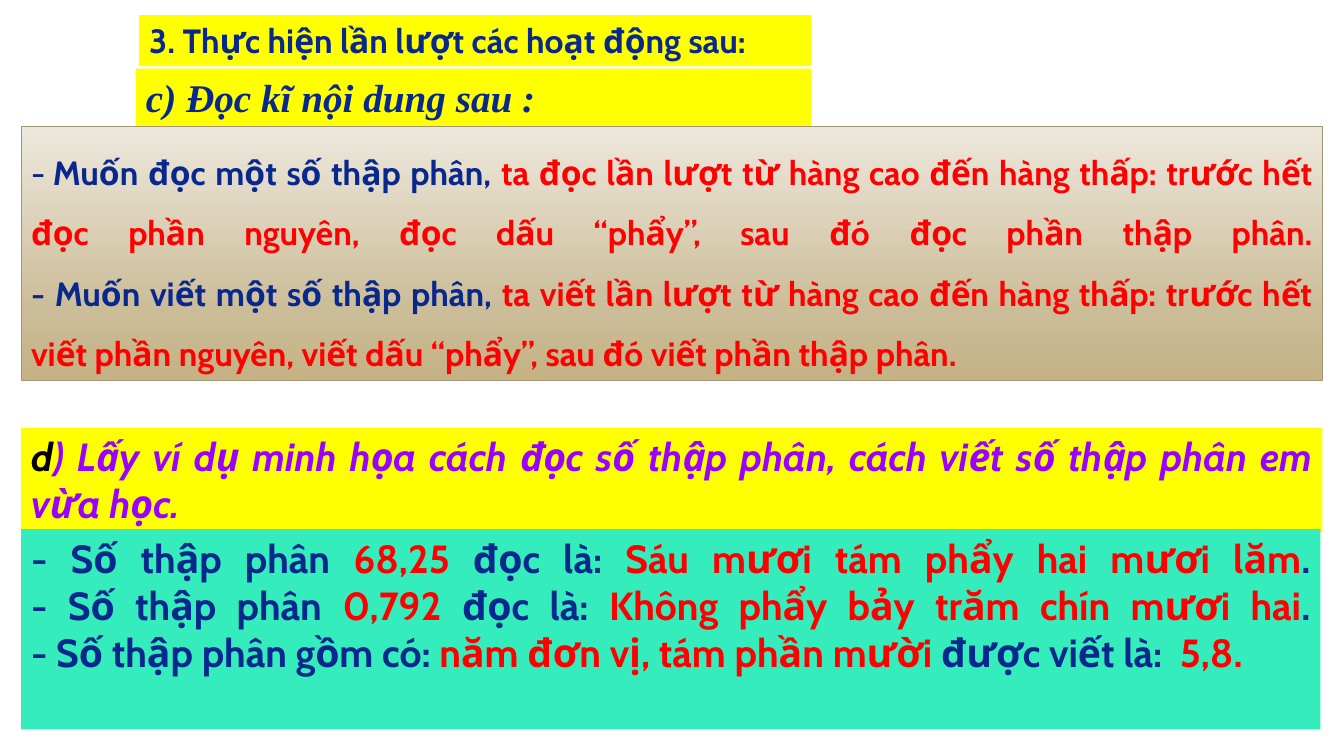
from copy import deepcopy

from pptx import Presentation
from pptx.dml.color import RGBColor
from pptx.enum.text import MSO_ANCHOR, MSO_AUTO_SIZE, PP_ALIGN
from pptx.oxml.ns import qn
from pptx.util import Pt

TOP, FIXED = MSO_ANCHOR.TOP, MSO_AUTO_SIZE.NONE
LEFT, JUST = PP_ALIGN.LEFT, PP_ALIGN.JUSTIFY

THEME = {
    "navy": "09288D", "red": "FF0000", "black": "000000", "violet": "9900FF",
    "yellow": "FFFF00", "mint": "34ECBC", "edge": "A19574",
    "sand": [(0, "EDE8DC"), (0.72, "CCBD99"), (1, "C4B284")],
    "sans": "Cabin", "serif": "Times New Roman", "small": 24, "large": 28,
}

# Content: each text is a list of (words, colour); "\n" stands for a line break
HEAD = [("3. Thực hiện lần lượt các hoạt động sau:", "navy")]
TASK = [("c) Đọc kĩ nội dung sau :", "navy")]
RULES = [
    ("-\u00a0", "navy"),
    ("Muốn đọc một số thập phân, ", "navy"),
    ("ta đọc lần lượt từ hàng cao đến hàng thấp: trước hết đọc phần nguyên, "
     "đọc dấu “phẩy”, sau đó đọc phần thập phân.", "red"),
    ("\n", "red"),
    ("- Muốn viết một số thập phân, ", "navy"),
    ("ta viết lần lượt từ hàng cao đến hàng thấp: trước hết viết phần nguyên, "
     "viết dấu “phẩy”, sau đó viết phần thập phân.", "red"),
]
ASK = [
    ("d", "black"),
    (") Lấy ví dụ minh họa cách đọc số thập phân, cách viết số thập phân "
     "em vừa học.", "violet"),
]
CASES = [
    ("- Số thập phân ", "navy"), ("68,25", "red"), (" đọc là: ", "navy"),
    ("Sáu mươi tám phẩy hai mươi lăm", "red"), (".", "navy"), ("\n", "navy"),
    ("- Số thập phân ", "navy"), ("0,792", "red"), (" đọc là: ", "navy"),
    ("Không phẩy bảy trăm chín mươi hai", "red"), (".", "navy"), ("\n", "navy"),
    ("- Số thập phân gồm có: ", "navy"), ("năm đơn vị, tám phần mười ", "red"),
    ("được viết là:  ", "navy"), ("5,8.", "red"),
]

# Boxes in points: left, top, width, height
EDGE, WIDE = 15.12, 929.5
HEAD_AT = (99.36, 10.8, 480.24, 36.4)
TASK_AT = (97.2, 48.96, 482.4, 41.2)
RULES_AT = (EDGE, 90.5, WIDE, 181.6)
ASK_AT = (EDGE, 305.5, WIDE, 75)
CASES_AT = (EDGE, 378, 928, 143)


def tint(name):
    return RGBColor.from_string(THEME.get(name, name))


def place(box, at):
    box.left, box.top, box.width, box.height = map(Pt, at)


def write(box, text, size, font="sans", slant=False, align=LEFT):
    frame = box.text_frame
    frame.word_wrap = True
    frame.auto_size = FIXED
    frame.vertical_anchor = TOP
    para = frame.paragraphs[0]
    para.alignment = align
    for words, color in text:
        if words == "\n":
            para.add_line_break()
            continue
        run = para.add_run()
        run.text = words
        run.font.name = THEME[font]
        run.font.size = Pt(THEME[size])
        run.font.bold = True
        run.font.italic = slant
        run.font.color.rgb = tint(color)
    return para


def paint(box, color):
    box.fill.solid()
    box.fill.fore_color.rgb = tint(color)


def shade(box, stops):
    box.fill.gradient()
    box.fill.gradient_angle = 270
    first = box.element.spPr.find(".//" + qn("a:gs"))
    first.addnext(deepcopy(first))
    for stop, (pos, color) in zip(box.fill.gradient_stops, stops):
        stop.position = pos
        stop.color.rgb = tint(color)


deck = Presentation()
deck.slide_width, deck.slide_height = Pt(960), Pt(540)
slide = deck.slides.add_slide(deck.slide_layouts[5])


def panel(at):
    return slide.shapes.add_textbox(*map(Pt, at))


# Heading
head = slide.shapes.title
place(head, HEAD_AT)
paint(head, "yellow")
write(head, HEAD, "small")

# Task line
task = panel(TASK_AT)
paint(task, "yellow")
write(task, TASK, "large", font="serif", slant=True)

# Reading and writing rules
rules = panel(RULES_AT)
shade(rules, THEME["sand"])
rules.line.color.rgb = tint("edge")
rules.line.width = Pt(0.79)
para = write(rules, RULES, "small", align=JUST)
para.line_spacing = 1.5
para.runs[0].font.bold = False

# Request for examples
ask = panel(ASK_AT)
paint(ask, "yellow")
write(ask, ASK, "large", slant=True, align=JUST)

# Worked examples
cases = panel(CASES_AT)
paint(cases, "mint")
write(cases, CASES, "large", align=JUST)

deck.save("out.pptx")
